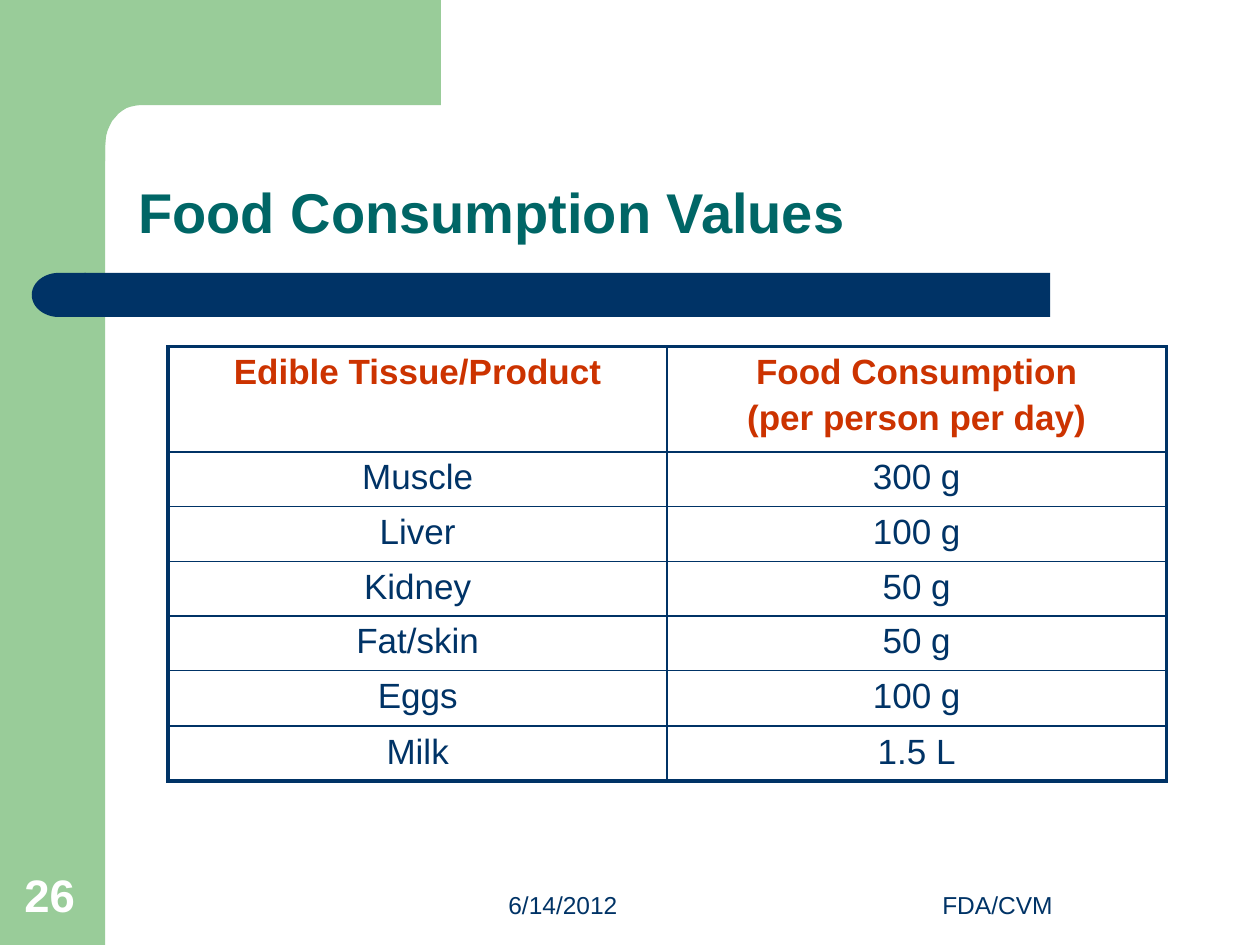
from math import cos, pi, sin

from lxml.etree import SubElement
from pptx import Presentation
from pptx.dml.color import RGBColor
from pptx.enum.shapes import MSO_SHAPE
from pptx.enum.text import MSO_ANCHOR, PP_ALIGN
from pptx.oxml.ns import qn
from pptx.util import Cm, Pt

HUES = {"green": "99CC99", "navy": "003366", "teal": "006666",
        "red": "CC3300", "white": "FFFFFF"}
ROWS = [
    (["Edible Tissue/Product"], ["Food Consumption", "(per person per day)"]),
    (["Muscle"], ["300 g"]),
    (["Liver"], ["100 g"]),
    (["Kidney"], ["50 g"]),
    (["Fat/skin"], ["50 g"]),
    (["Eggs"], ["100 g"]),
    (["Milk"], ["1.5 L"]),
]
TALL = [2.12, 1.06, 1.02, 1, 1.06, 1.12, 1.06]


def hue(name):
    return RGBColor.from_string(HUES[name])


class Deck:
    def __init__(self, wide, high, font):
        self.show = Presentation()
        self.show.slide_width = Cm(wide)
        self.show.slide_height = Cm(high)
        self.font = font
        self.slide = self.show.slides.add_slide(self.show.slide_layouts[6])

    def paint(self, shape, tint):
        shape.shadow.inherit = False
        shape.fill.solid()
        shape.fill.fore_color.rgb = hue(tint)
        shape.line.fill.background()

    def shape(self, kind, box, tint, turn=0):
        item = self.slide.shapes.add_shape(kind, *map(Cm, box))
        item.rotation = turn
        self.paint(item, tint)

    def form(self, points, tint):
        spots = [(round(x * 100), round(y * 100)) for x, y in points]
        pen = self.slide.shapes.build_freeform(*spots[0], scale=Cm(0.01))
        pen.add_line_segments(spots[1:], close=True)
        self.paint(pen.convert_to_shape(), tint)

    def words(self, frame, lines, size, tint, bold, align):
        for i, line in enumerate(lines):
            para = frame.add_paragraph() if i else frame.paragraphs[0]
            para.alignment = align
            if i:
                para.space_before = Pt(size * 0.2)
            run = para.add_run()
            run.text = line
            run.font.name = self.font
            run.font.size = Pt(size)
            run.font.bold = bold
            run.font.color.rgb = hue(tint)

    def text(self, box, line, size, tint, bold=False, align=PP_ALIGN.LEFT, lead=1):
        frame = self.slide.shapes.add_textbox(*map(Cm, box)).text_frame
        frame.word_wrap = True
        frame.vertical_anchor = MSO_ANCHOR.BOTTOM
        self.words(frame, [line], size, tint, bold, align)
        frame.paragraphs[0].line_spacing = lead

    def edge(self, cell, side, width, tint):
        line = SubElement(cell._tc.get_or_add_tcPr(), qn("a:" + side), w=str(Pt(width)))
        fill = SubElement(line, qn("a:solidFill"))
        SubElement(fill, qn("a:srgbClr"), val=HUES[tint])

    def table(self, box, rows, tall):
        last, end = len(rows) - 1, len(rows[0]) - 1
        grid = self.slide.shapes.add_table(last + 1, end + 1, *map(Cm, box)).table
        for y, row in enumerate(rows):
            grid.rows[y].height = Cm(tall[y])
            for x, lines in enumerate(row):
                cell = grid.cell(y, x)
                outer = {"lnL": x == 0, "lnR": x == end, "lnT": y == 0, "lnB": y == last}
                for side, thick in outer.items():
                    self.edge(cell, side, 2.25 if thick else 1, "navy")
                cell.fill.background()
                tint = "navy" if y else "red"
                self.words(cell.text_frame, lines, 20, tint, y == 0, PP_ALIGN.CENTER)


def main():
    deck = Deck(25.4, 19.05, "Arial")
    deck.shape(MSO_SHAPE.RECTANGLE, (0, 0, 2.12, 19.05), "green")
    turns = [pi / 2 * i / 12 for i in range(13)]
    curve = [(2.82 - 0.7 * sin(a), 2.95 - 0.83 * cos(a)) for a in turns]
    deck.form([(8.89, 0), (8.89, 2.12), *curve, (2.12, 3.25), (1.27, 3.25), (1.27, 0)],
              "green")
    deck.shape(MSO_SHAPE.RECTANGLE, (1.7, 5.5, 19.47, 0.89), "navy")
    deck.shape(MSO_SHAPE.FLOWCHART_DELAY, (0.64, 5.5, 1.09, 0.89), "navy", 180)
    deck.text((6.77, 17.35, 5.93, 1.32), "6/14/2012", 14, "navy", align=PP_ALIGN.RIGHT)
    deck.text((16.09, 17.35, 8.04, 1.32), "FDA/CVM", 14, "navy", align=PP_ALIGN.CENTER)
    deck.text((0.24, 17.35, 1.63, 1.35), "26", 26, "white", True)
    deck.text((2.54, 2.12, 21.59, 2.96), "Food Consumption Values", 32, "teal", True,
              lead=0.9)
    deck.table((3.39, 6.99, 20.12, sum(TALL)), ROWS, TALL)
    deck.show.save("out.pptx")


if __name__ == "__main__":
    main()
